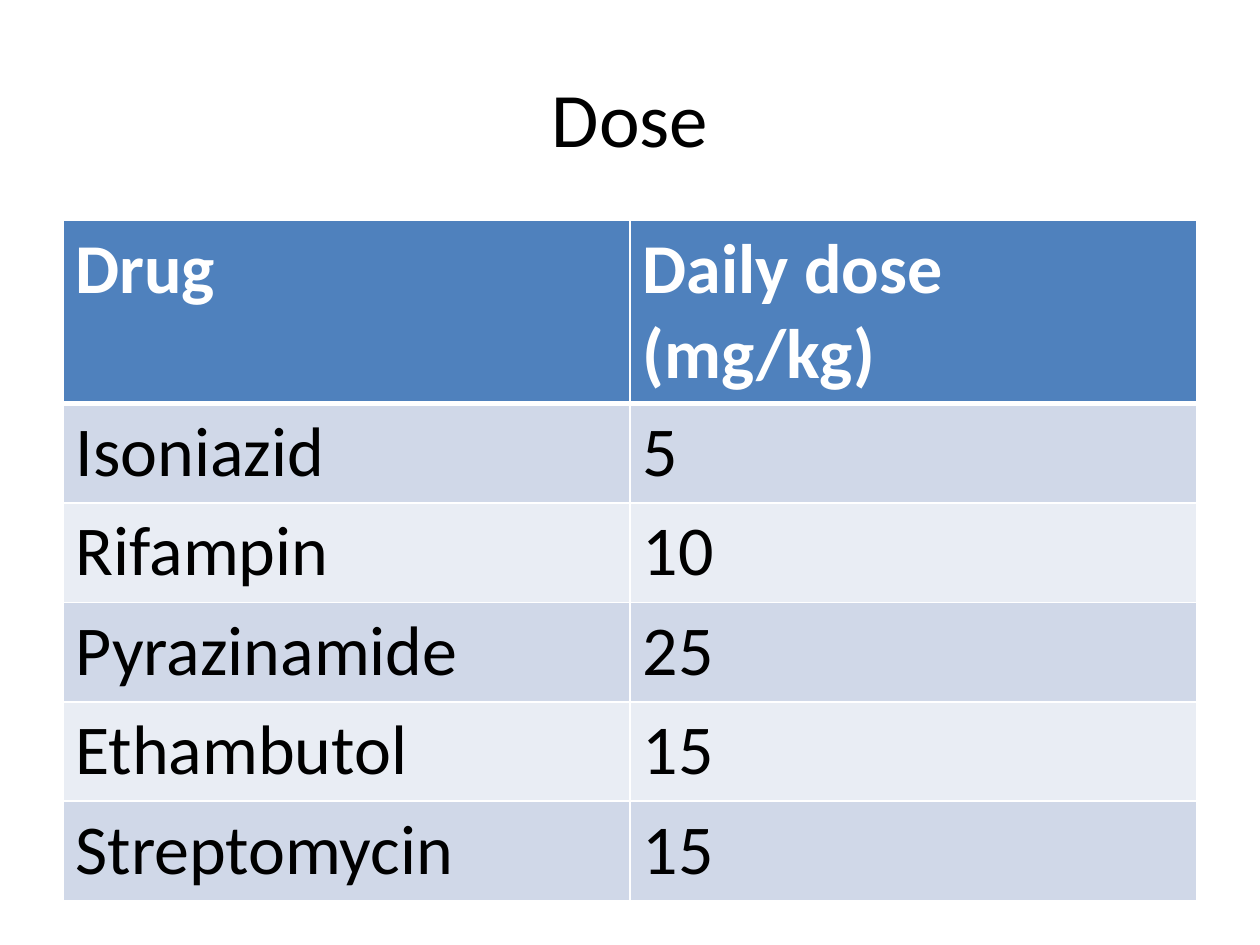
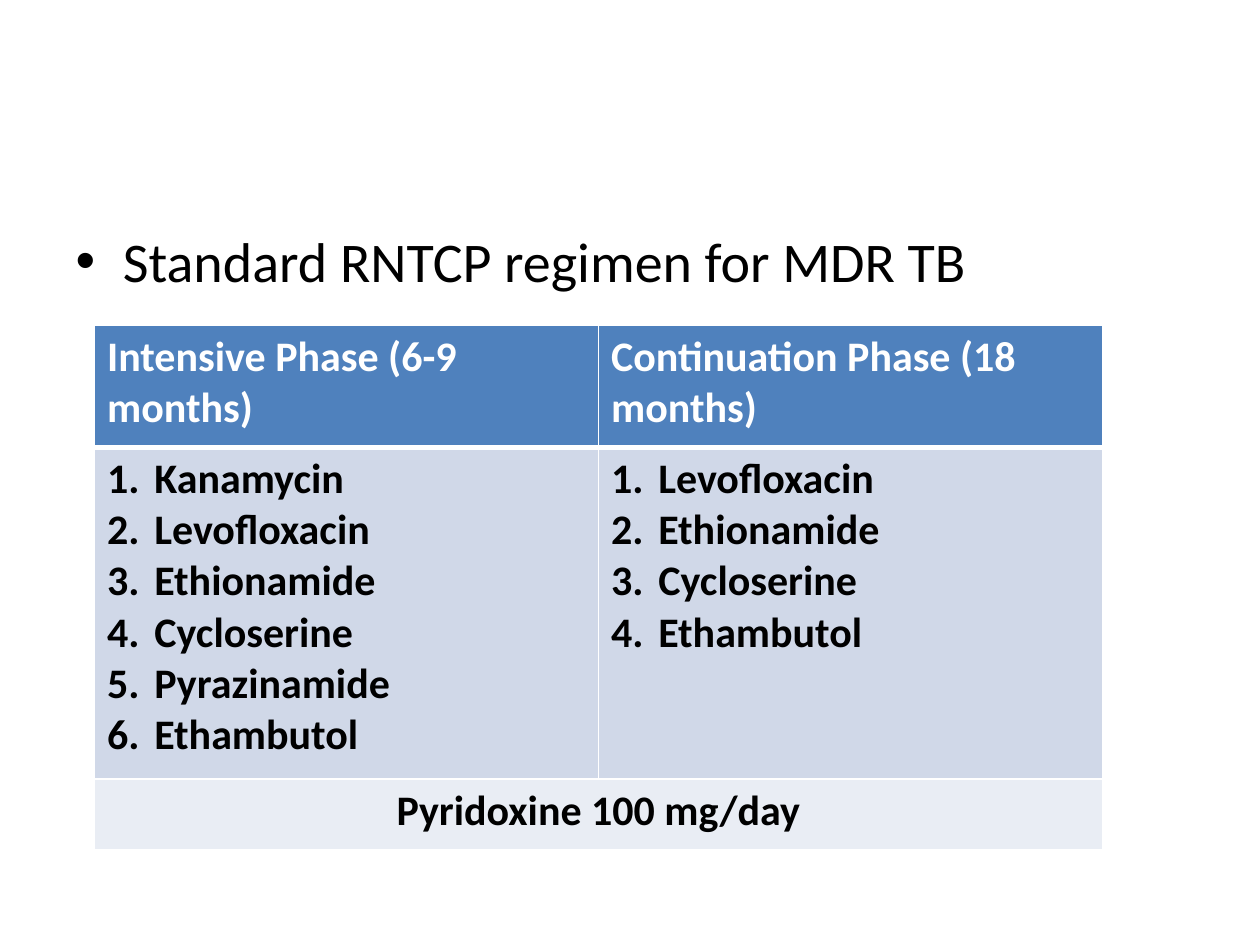
"""Build two slides on drug doses and the standard regimen."""
import pptx
import pptx.dml.color
import pptx.enum.text
import pptx.util
from pptx.oxml.ns import qn
from lxml import etree

Pt = pptx.util.Pt
RGBColor = pptx.dml.color.RGBColor
ALIGN = pptx.enum.text.PP_ALIGN
ANCHOR = pptx.enum.text.MSO_ANCHOR

FONT = "Calibri"
BLACK = RGBColor(0x00, 0x00, 0x00)
WHITE = RGBColor(0xFF, 0xFF, 0xFF)
BLUE = RGBColor(0x4F, 0x81, 0xBD)
BANDS = RGBColor(0xD0, 0xD8, 0xE8), RGBColor(0xE9, 0xED, 0xF4)
INDENT = 27


class Deck:
    def __init__(self):
        self.show = pptx.Presentation()
        self.show.slide_width, self.show.slide_height = Pt(720), Pt(540)
        self.slide = None

    def start(self, layout):
        self.slide = self.show.slides.add_slide(self.show.slide_layouts[layout])

    def place(self, shape, left, top, width, height):
        shape.left, shape.top = Pt(left), Pt(top)
        shape.width, shape.height = Pt(width), Pt(height)

    def text(self, para, words, size, color=BLACK, bold=False, align=ALIGN.LEFT):
        para.alignment = align
        run = para.add_run()
        run.text = words
        font = run.font
        font.name, font.size, font.bold = FONT, Pt(size), bold
        font.color.rgb = color

    def indent(self, para, face, tag, **marks):
        props = para._p.get_or_add_pPr()
        props.set("marL", str(Pt(INDENT)))
        props.set("indent", str(Pt(-INDENT)))
        etree.SubElement(props, qn("a:buFont"), typeface=face)
        etree.SubElement(props, qn(tag), **marks)

    def title(self, words):
        shape = self.slide.shapes.title
        self.place(shape, 36, 21.6, 648, 90)
        shape.text_frame.vertical_anchor = ANCHOR.MIDDLE
        self.text(shape.text_frame.paragraphs[0], words, 44, align=ALIGN.CENTER)

    def body(self, words):
        head = self.slide.shapes.title
        head._element.getparent().remove(head._element)
        shape = self.slide.placeholders[1]
        self.place(shape, 36, 126, 648, 356.4)
        para = shape.text_frame.paragraphs[0]
        self.text(para, words, 32)
        self.indent(para, "Arial", "a:buChar", char="•")

    def edge(self, cell, row):
        props = cell._tc.get_or_add_tcPr()
        widths = {"L": 1, "R": 1, "T": 3 if row == 1 else 1, "B": 1 if row else 3}
        for side, width in widths.items():
            line = etree.SubElement(props, qn("a:ln" + side), w=str(Pt(width)))
            fill = etree.SubElement(line, qn("a:solidFill"))
            etree.SubElement(fill, qn("a:srgbClr"), val=str(WHITE))

    def fill(self, cell, row, value, size, bold):
        self.edge(cell, row)
        cell.fill.solid()
        cell.fill.fore_color.rgb = BANDS[(row - 1) % 2] if row else BLUE
        listed = isinstance(value, list)
        frame = cell.text_frame
        for place, words in enumerate(value if listed else [value]):
            para = frame.add_paragraph() if place else frame.paragraphs[0]
            self.text(para, words, size, BLACK if row else WHITE, bold or row == 0,
                      ALIGN.CENTER if cell.is_merge_origin else ALIGN.LEFT)
            if listed:
                self.indent(para, "+mj-lt", "a:buAutoNum", type="arabicPeriod")

    def table(self, rows, left, top, width, heights, size, bold=False):
        count = len(rows[0])
        frame = self.slide.shapes.add_table(len(rows), count, Pt(left), Pt(top),
                                            Pt(width), Pt(sum(heights)))
        grid = frame.table
        for column in grid.columns:
            column.width = Pt(width / count)
        for row, (values, height) in enumerate(zip(rows, heights)):
            grid.rows[row].height = Pt(height)
            if len(values) < count:
                grid.cell(row, 0).merge(grid.cell(row, count - 1))
            for col, value in enumerate(values):
                self.fill(grid.cell(row, col), row, value, size, bold)


def main():
    deck = Deck()

    deck.start(5)
    deck.title("Dose")
    doses = [("Drug", "Daily dose (mg/kg)"), ("Isoniazid", "5"), ("Rifampin", "10"),
             ("Pyrazinamide", "25"), ("Ethambutol", "15"), ("Streptomycin", "15")]
    deck.table(doses, 36, 126, 648, [104] + [56.8] * 5, 40)

    deck.start(1)
    deck.body("Standard RNTCP regimen for MDR TB")
    shared = ["Levofloxacin", "Ethionamide", "Cycloserine"]
    phases = [("Intensive Phase (6-9 months)", "Continuation Phase (18 months)"),
              (["Kanamycin", *shared, "Pyrazinamide", "Ethambutol"], [*shared, "Ethambutol"]),
              ("Pyridoxine 100 mg/day",)]
    deck.table(phases, 54, 186, 576, [69.6, 189.6, 40.4], 24, bold=True)

    deck.show.save("out.pptx")


if __name__ == "__main__":
    main()
